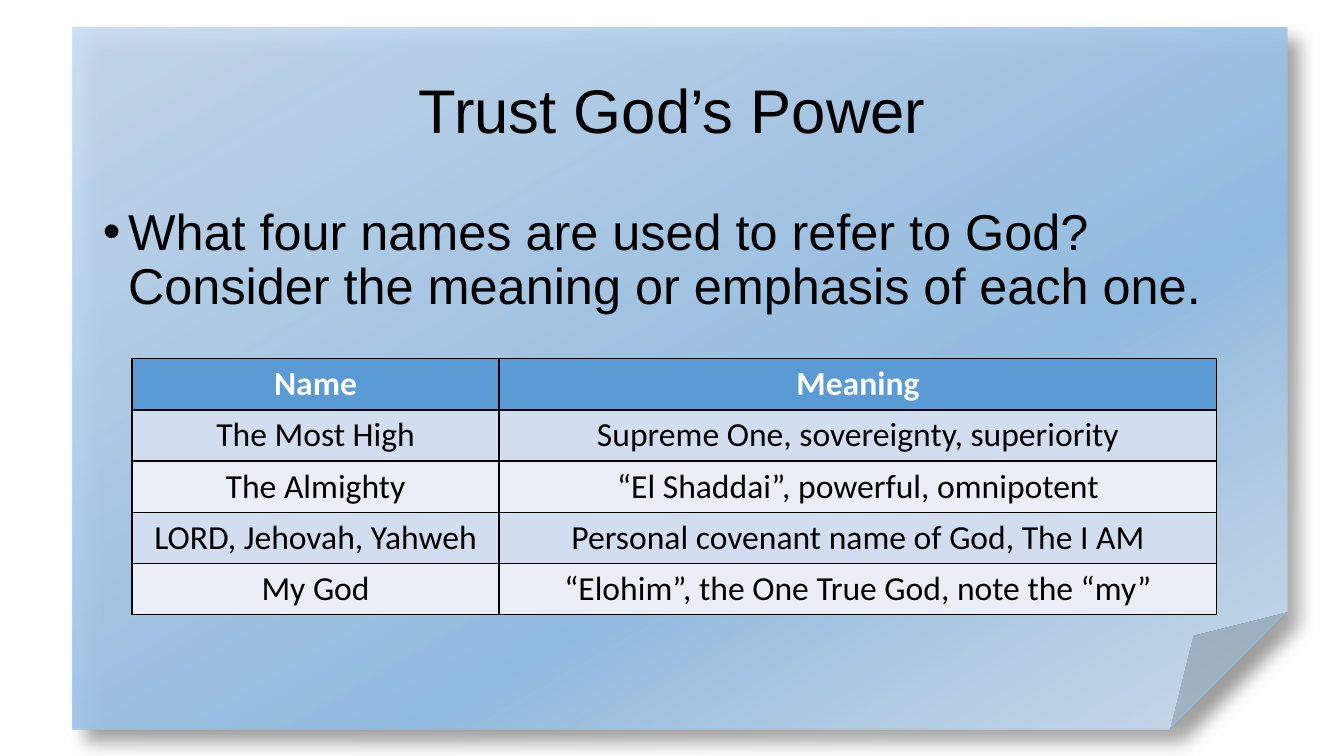
from lxml import etree
from pptx import Presentation
from pptx.dml.color import RGBColor
from pptx.enum.shapes import MSO_SHAPE as Shape
from pptx.enum.text import MSO_ANCHOR as Anchor, MSO_AUTO_SIZE as Auto, PP_ALIGN as Align
from pptx.oxml import parse_xml
from pptx.oxml.ns import nsdecls, qn
from pptx.util import Inches, Pt

# Content
TITLE = "Trust God’s Power"
ASK = "What four names are used to refer to God? Consider the meaning or emphasis of each one."
ROWS = [
    ("Name", "Meaning"),
    ("The Most High", "Supreme One, sovereignty, superiority"),
    ("The Almighty", "“El Shaddai”, powerful, omnipotent"),
    ("LORD, Jehovah, Yahweh", "Personal covenant name of God, The I AM"),
    ("My God", "“Elohim”, the One True God, note the “my”"),
]
COLS = (3.64, 7.12)
ROW_H = 0.5
HEAD, BANDS = "5B9BD5", ("EAEFF7", "D2DEEF")
BLACK, WHITE = "000000", "FFFFFF"
# Gradient stops: place and opacity in percent
STOPS = [(0, "C5DBF1", 87), (64, "91BCE3", 95), (83, "B5D2EC", 87), (100, "CEE1F2", 87)]


def color(code):
    return RGBColor.from_string(code)


def write(para, text, size, face, code, bold=False):
    run = para.add_run()
    run.text = text
    font = run.font
    font.size, font.name, font.bold = Pt(size), face, bold
    font.color.rgb = color(code)


def place(shape, left, top, width, height):
    shape.left, shape.top = Inches(left), Inches(top)
    shape.width, shape.height = Inches(width), Inches(height)


def tint(code, alpha):
    return f'<a:srgbClr val="{code}"><a:alpha val="{alpha * 1000}"/></a:srgbClr>'


def border(cell):
    props = cell._tc.get_or_add_tcPr()
    for i, side in enumerate(("lnL", "lnR", "lnT", "lnB")):
        props.insert(i, parse_xml(
            f'<a:{side} {nsdecls("a")} w="{Pt(1)}"><a:solidFill>'
            f'<a:srgbClr val="{BLACK}"/></a:solidFill></a:{side}>'))


deck = Presentation()
deck.slide_width, deck.slide_height = Inches(13.33), Inches(7.5)
slide = deck.slides.add_slide(deck.slide_layouts[1])
slide.background.fill.solid()
slide.background.fill.fore_color.rgb = color(WHITE)

# Paper sheet behind the text
sheet = slide.shapes.add_shape(
    Shape.FOLDED_CORNER, Inches(0.72), Inches(0.27), Inches(12.05), Inches(6.97))
sheet.line.fill.background()
sheet.shadow.inherit = False
props = sheet._element.spPr
stops = "".join(f'<a:gs pos="{pos * 1000}">{tint(code, alpha)}</a:gs>' for pos, code, alpha in STOPS)
props.find(qn("a:ln")).addprevious(parse_xml(
    f'<a:gradFill {nsdecls("a")} rotWithShape="1"><a:gsLst>{stops}</a:gsLst>'
    f'<a:lin ang="{60 * 60000}" scaled="0"/></a:gradFill>'))
props.find(qn("a:effectLst")).append(parse_xml(
    f'<a:outerShdw {nsdecls("a")} blurRad="{Pt(13)}" dist="{Pt(13)}" dir="{45 * 60000}"'
    f' algn="tl" rotWithShape="0">{tint(BLACK, 40)}</a:outerShdw>'))
slide.shapes._spTree.insert(2, sheet._element)

# Title
title = slide.shapes.title
place(title, 0.92, 0.4, 11.5, 1.45)
frame = title.text_frame
frame.auto_size, frame.vertical_anchor = Auto.NONE, Anchor.MIDDLE
para = frame.paragraphs[0]
para.alignment, para.line_spacing = Align.CENTER, 0.9
write(para, TITLE, 44, "Arial", BLACK)

# Question
body = slide.placeholders[1]
place(body, 0.92, 2, 11.5, 4.76)
frame = body.text_frame
frame.auto_size, frame.vertical_anchor = Auto.NONE, Anchor.TOP
para = frame.paragraphs[0]
props = para._p.get_or_add_pPr()
props.set("marL", str(Inches(0.25)))
props.set("indent", str(-Inches(0.25)))
etree.SubElement(props, qn("a:buFont")).set("typeface", "Arial")
etree.SubElement(props, qn("a:buChar")).set("char", "•")
para.line_spacing, para.space_before = 0.9, Pt(0)
write(para, ASK, 36, "Arial", BLACK)

# Table of names
table = slide.shapes.add_table(
    len(ROWS), len(COLS), Inches(1.31), Inches(3.56),
    Inches(sum(COLS)), Inches(ROW_H * len(ROWS))).table
for col, width in zip(table.columns, COLS):
    col.width = Inches(width)
for r, row in enumerate(ROWS):
    for c, text in enumerate(row):
        cell = table.cell(r, c)
        cell.fill.solid()
        cell.fill.fore_color.rgb = color(BANDS[r % 2] if r else HEAD)
        border(cell)
        para = cell.text_frame.paragraphs[0]
        para.alignment = Align.CENTER
        write(para, text, 24, "Calibri", BLACK if r else WHITE, r == 0)

deck.save("out.pptx")
